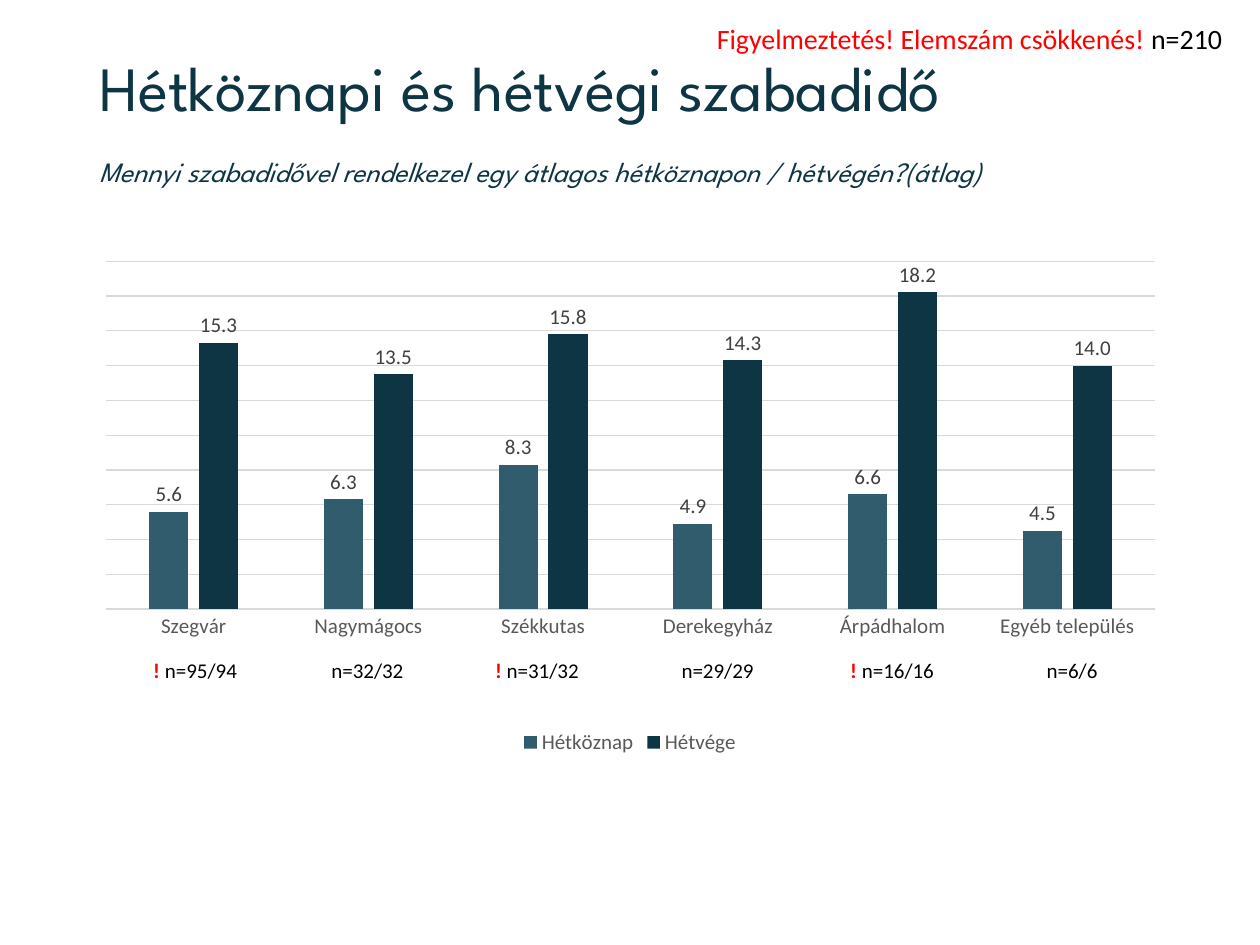
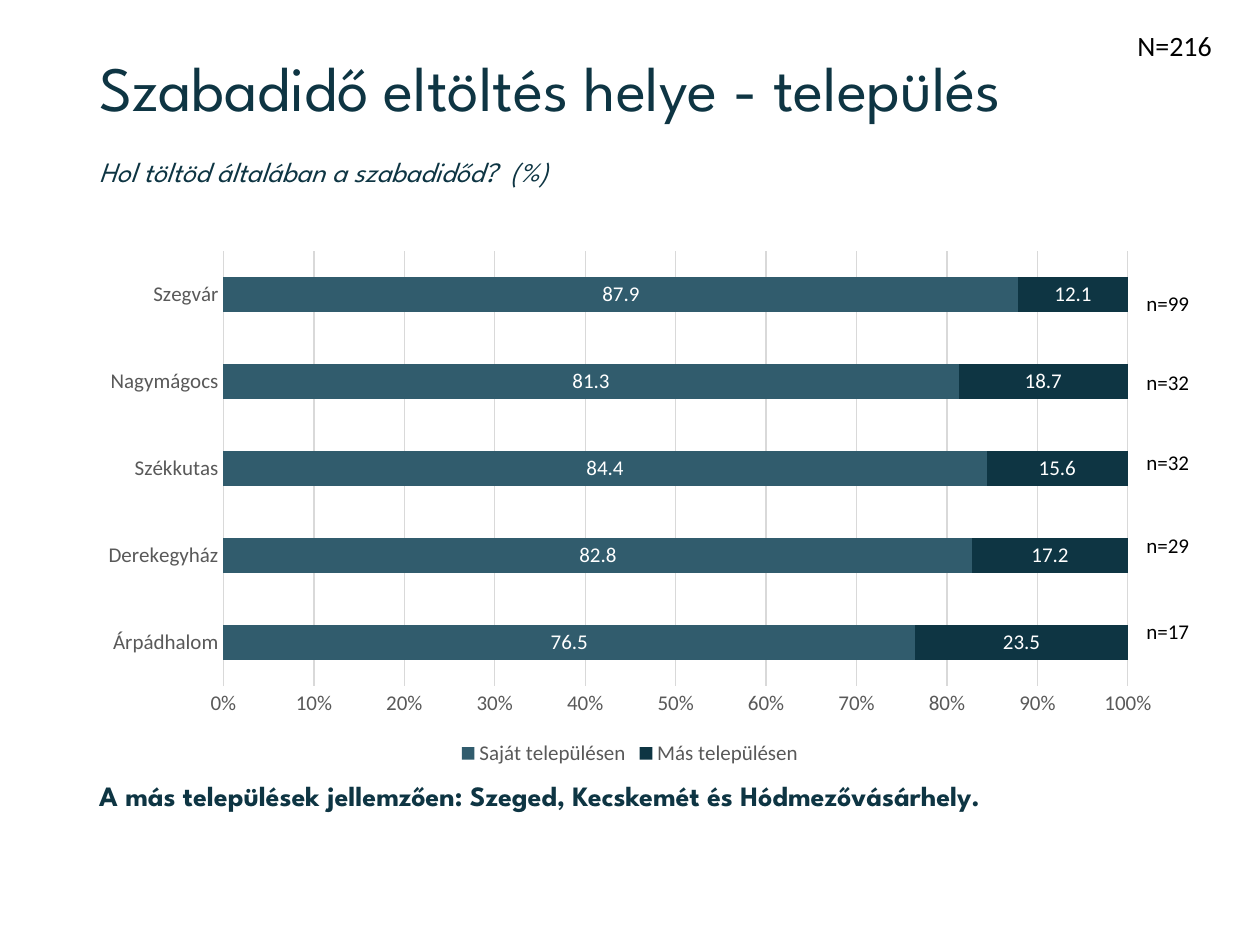
from lxml import etree
from pptx import Presentation
from pptx.chart.data import CategoryChartData
from pptx.dml.color import RGBColor
from pptx.enum.chart import XL_CHART_TYPE as CT, XL_LABEL_POSITION as LP
from pptx.enum.chart import XL_LEGEND_POSITION as LEG, XL_TICK_MARK as TM
from pptx.enum.text import MSO_ANCHOR
from pptx.oxml.ns import qn
from pptx.util import Cm, Pt

HEAD_FONT, BODY_FONT = "League Spartan", "Calibri"
DARK, TEAL, GRID, GREY = "0E3543", "315C6D", "D9D9D9", "595959"
BLACK, RED, WHITE = "000000", "FF0000", "FFFFFF"
LEFT, TEXT_W, CHART_W = 1.75, 22.28, 21.9
N_W, N_H = 2.41, 0.76

TITLE = dict(name=HEAD_FONT, size=36, color=DARK)
QUESTION = dict(name=HEAD_FONT, size=16, color=DARK, italic=True)
NOTE = dict(name=HEAD_FONT, size=16, color=DARK, bold=True)
TOTAL = dict(name=BODY_FONT, size=16, color=BLACK)
WARNING = dict(TOTAL, color=RED)
COUNT = dict(name=BODY_FONT, size=12, color=BLACK)
MARK = dict(COUNT, color=RED, bold=True)
AXIS = dict(name=BODY_FONT, size=12, color=GREY)

SLIDES = [
    dict(
        title="Hétköznapi és hétvégi szabadidő",
        question="Mennyi szabadidővel rendelkezel egy átlagos hétköznapon / hétvégén?(átlag)",
        total=((14.2, 0.3, 10.97, 0.94),
               [("Figyelmeztetés! Elemszám csökkenés! ", WARNING), ("n=210", TOTAL)]),
        chart=dict(
            kind=CT.COLUMN_CLUSTERED, top=4.88, height=10.44, gap=219, overlap=-27,
            cats=["Szegvár", "Nagymágocs", "Székkutas", "Derekegyház", "Árpádhalom",
                  "Egyéb település"],
            series=[("Hétköznap", TEAL, [5.6, 6.3, 8.3, 4.9, 6.6, 4.5]),
                    ("Hétvége", DARK, [15.3, 13.5, 15.8, 14.3, 18.2, 14.0])],
            label_color="404040", label_pos=LP.OUTSIDE_END, scale=(20, 2),
            axis_shown=False, plot_area=(0.018, 0.037, 0.965, 0.672)),
        counts=[(2.84, 13.13, True, "n=95/94"), (6.43, 13.13, False, "n=32/32"),
                (9.73, 13.13, True, "n=31/32"), (13.49, 13.13, False, "n=29/29"),
                (16.89, 13.13, True, "n=16/16"), (20.85, 13.13, False, "n=6/6")],
        note=None),
    dict(
        title="Szabadidő eltöltés helye - település",
        question="Hol töltöd általában a szabadidőd?  (%)",
        total=((22.68, 0.46, 2.49, 0.94), [("N=216", TOTAL)]),
        chart=dict(
            kind=CT.BAR_STACKED_100, top=4.85, height=10.69, gap=150, overlap=100,
            cats=["Árpádhalom", "Derekegyház", "Székkutas", "Nagymágocs", "Szegvár"],
            series=[("Saját településen", TEAL, [76.5, 82.8, 84.4, 81.3, 87.9]),
                    ("Más településen", DARK, [23.5, 17.2, 15.6, 18.7, 12.1])],
            label_color=WHITE, label_pos=LP.CENTER, scale=(1, 0.1),
            axis_shown=True, plot_area=None),
        counts=[(22.86, 5.74, False, "n=99"), (22.86, 7.32, False, "n=32"),
                (22.86, 8.94, False, "n=32"), (22.86, 10.62, False, "n=29"),
                (22.86, 12.34, False, "n=17")],
        note="A más települések jellemzően: Szeged, Kecskemét és Hódmezővásárhely."),
]


def rgb(color):
    return RGBColor.from_string(color)


def set_font(font, fmt):
    for key, value in fmt.items():
        if key == "color":
            font.color.rgb = rgb(value)
        else:
            setattr(font, key, Pt(value) if key == "size" else value)


def set_line(line, color):
    line.color.rgb = rgb(color)
    line.width = Pt(0.75)


def add_text(s, box, runs, spacing=None):
    tf = s.shapes.add_textbox(*map(Cm, box)).text_frame
    tf.word_wrap = True
    tf.vertical_anchor = MSO_ANCHOR.TOP
    p = tf.paragraphs[0]
    if spacing:
        p.line_spacing = spacing
    for text, fmt in runs:
        r = p.add_run()
        r.text = text
        set_font(r.font, fmt)


def set_plot_area(chart, fractions):
    area = chart.plots[0]._element.getparent()
    for old in area.findall(qn("c:layout")):
        area.remove(old)
    layout = etree.Element(qn("c:layout"))
    area.insert(0, layout)
    manual = etree.SubElement(layout, qn("c:manualLayout"))
    values = [("layoutTarget", "inner"), ("xMode", "edge"), ("yMode", "edge")]
    values += zip("xywh", map(str, fractions))
    for tag, value in values:
        etree.SubElement(manual, qn(f"c:{tag}")).set("val", value)


def style_axes(chart, spec):
    cat, val = chart.category_axis, chart.value_axis
    for axis in (cat, val):
        axis.major_tick_mark = axis.minor_tick_mark = TM.NONE
        set_font(axis.tick_labels.font, AXIS)
    set_line(cat.format.line, GRID)
    val.format.line.fill.background()
    val.has_major_gridlines = True
    set_line(val.major_gridlines.format.line, GRID)
    val.minimum_scale = 0
    val.maximum_scale, val.major_unit = spec["scale"]
    val.tick_labels.number_format = "0%"
    val.tick_labels.number_format_is_linked = False
    val.visible = spec["axis_shown"]


def add_bars(s, spec):
    data = CategoryChartData(number_format="0.0")
    data.categories = spec["cats"]
    for name, _, values in spec["series"]:
        data.add_series(name, values)
    box = map(Cm, (LEFT, spec["top"], CHART_W, spec["height"]))
    chart = s.shapes.add_chart(spec["kind"], *box, data).chart
    set_font(chart.font, dict(name=BODY_FONT, size=10, color=BLACK))
    chart.has_title = False
    chart.has_legend = True
    chart.legend.position = LEG.BOTTOM
    chart.legend.include_in_layout = False
    set_font(chart.legend.font, AXIS)
    style_axes(chart, spec)

    plot = chart.plots[0]
    plot.vary_by_categories = False
    plot.gap_width, plot.overlap = spec["gap"], spec["overlap"]
    for series, (_, color, _) in zip(plot.series, spec["series"]):
        series.format.fill.solid()
        series.format.fill.fore_color.rgb = rgb(color)
        series.invert_if_negative = False
        labels = series.data_labels
        labels.show_value = True
        labels.number_format = "0.0"
        labels.number_format_is_linked = False
        labels.position = spec["label_pos"]
        set_font(labels.font, dict(AXIS, color=spec["label_color"]))
    if spec["plot_area"]:
        set_plot_area(chart, spec["plot_area"])


def build_slide(prs, content):
    s = prs.slides.add_slide(prs.slide_layouts[6])
    add_text(s, (LEFT, 1.02, TEXT_W, 2.03), [(content["title"], TITLE)], 0.9)
    add_bars(s, content["chart"])
    add_text(s, (LEFT, 3.07, TEXT_W, 1.37), [(content["question"], QUESTION)], 0.9)
    if content["note"]:
        add_text(s, (LEFT, 15.65, TEXT_W, 1.37), [(content["note"], NOTE)], 0.9)
    add_text(s, *content["total"])
    for left, top, marked, text in content["counts"]:
        runs = [("! ", MARK)] if marked else []
        add_text(s, (left, top, N_W, N_H), runs + [(text, COUNT)])


def main():
    prs = Presentation()
    prs.slide_width, prs.slide_height = Cm(25.4), Cm(19.05)
    for content in SLIDES:
        build_slide(prs, content)
    prs.save("out.pptx")


if __name__ == "__main__":
    main()
